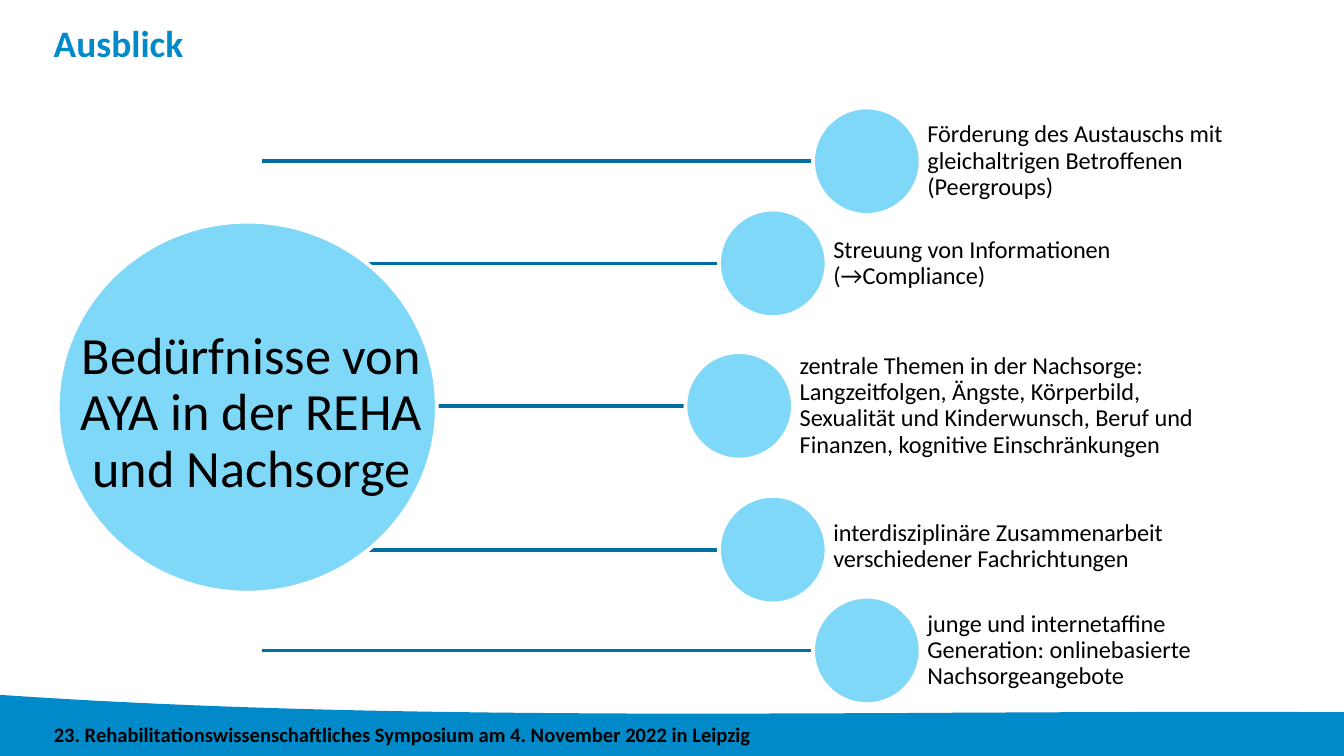
from lxml import etree
from pptx import Presentation
from pptx.dml.color import RGBColor
from pptx.enum.shapes import MSO_CONNECTOR, MSO_SHAPE
from pptx.enum.text import MSO_ANCHOR, PP_ALIGN
from pptx.oxml.ns import qn
from pptx.util import Inches, Pt

STRAIGHT = MSO_CONNECTOR.STRAIGHT
OVAL = MSO_SHAPE.OVAL
TOP, MIDDLE, BOTTOM = MSO_ANCHOR.TOP, MSO_ANCHOR.MIDDLE, MSO_ANCHOR.BOTTOM
LEFT, CENTER = PP_ALIGN.LEFT, PP_ALIGN.CENTER

COLORS = {"brand": "008AC9", "line": "006FA1", "circle": "7FD8F8",
          "text": "000000", "white": "FFFFFF"}
FONT = "Calibri"

HUB_X = 1.95
DOT = 0.8
TEXT_RIGHT = 9.23

# Centre x and y of each small circle, top of its label, label
TOPICS = [
    (6.45, 1.2, 0.8, "Förderung des Austauschs mit gleichaltrigen Betroffenen (Peergroups)"),
    (5.75, 1.96, 1.56, "Streuung von Informationen (→Compliance)"),
    (5.5, 3.02, 2.62,
     "zentrale Themen in der Nachsorge: Langzeitfolgen, Ängste, Körperbild, "
     "Sexualität und Kinderwunsch, Beruf und Finanzen, kognitive Einschränkungen"),
    (5.75, 4.09, 3.67, "interdisziplinäre Zusammenarbeit verschiedener Fachrichtungen"),
    (6.45, 4.84, 4.44, "junge und internetaffine Generation: onlinebasierte Nachsorgeangebote"),
]


def rgb(name):
    return RGBColor.from_string(COLORS[name])


def curve(p0, p1, p2, p3, steps=40):
    """Return points along a cubic Bézier curve."""
    points = []
    for i in range(steps + 1):
        t = i / steps
        u = 1 - t
        points.append(tuple(u**3 * a + 3 * u*u*t * b + 3 * u*t*t * c + t**3 * d
                            for a, b, c, d in zip(p0, p1, p2, p3)))
    return points


class SlideBuilder:
    def __init__(self, prs):
        self.shapes = prs.slides.add_slide(prs.slide_layouts[6]).shapes

    def area(self, points, color):
        first, *rest = [(Inches(x), Inches(y)) for x, y in points]
        builder = self.shapes.build_freeform(*first)
        builder.add_line_segments(rest, close=True)
        s = builder.convert_to_shape()
        s.shadow.inherit = False
        s.fill.solid()
        s.fill.fore_color.rgb = rgb(color)
        s.line.fill.background()

    def line(self, x1, y1, x2, y2):
        s = self.shapes.add_connector(STRAIGHT, Inches(x1), Inches(y1), Inches(x2), Inches(y2))
        s.line.color.rgb = rgb("line")
        s.line.width = Pt(2)
        etree.SubElement(s._element.spPr, qn("a:effectLst"))

    def circle(self, cx, cy, w, h):
        s = self.shapes.add_shape(OVAL, Inches(cx - w / 2), Inches(cy - h / 2),
                                  Inches(w), Inches(h))
        s.shadow.inherit = False
        s.fill.solid()
        s.fill.fore_color.rgb = rgb("circle")
        s.line.color.rgb = rgb("white")
        s.line.width = Pt(2)

    def text(self, x, y, w, h, text, size, color="text", bold=False, anchor=TOP,
             align=LEFT, spacing=None, inset=0):
        tf = self.shapes.add_textbox(Inches(x), Inches(y), Inches(w), Inches(h)).text_frame
        tf.word_wrap = True
        tf.vertical_anchor = anchor
        tf.margin_left = tf.margin_right = Inches(inset)
        tf.margin_top = tf.margin_bottom = 0
        tf.text = text
        p = tf.paragraphs[0]
        p.alignment = align
        p.line_spacing = spacing
        font = p.runs[0].font
        font.name, font.size, font.bold = FONT, Pt(size), bold
        font.color.rgb = rgb(color)


def main():
    prs = Presentation()
    prs.slide_width = Inches(10)
    prs.slide_height = prs.slide_width * 9 // 16
    slide = SlideBuilder(prs)

    wave = curve((-0.01, 5.17), (3.17, 5.39), (6.66, 5.28), (10, 5.3))
    slide.area(wave + [(10, 5.63), (-0.01, 5.63)], "brand")
    slide.text(0.4, 5.37, 7.28, 0.25,
               "23. Rehabilitationswissenschaftliches Symposium am 4. November 2022 in Leipzig",
               11, bold=True)
    slide.text(0.4, 0.15, 4.97, 0.66, "Ausblick", 20, "brand", bold=True, spacing=Pt(24))

    for cx, cy, _, _ in reversed(TOPICS):
        slide.line(HUB_X, cy, cx, cy)
    slide.circle(1.84, 3.03, 2.82, 2.76)
    slide.text(0.45, 2.24, 2.84, 1.47, "Bedürfnisse von AYA in der REHA und Nachsorge",
               28, anchor=BOTTOM, align=CENTER, spacing=0.9)

    for cx, cy, top, label in TOPICS:
        slide.circle(cx, cy, DOT, DOT)
        x = cx + DOT / 2
        slide.text(x, top, TEXT_RIGHT - x, DOT, label, 13,
                   anchor=MIDDLE, spacing=0.9, inset=0.05)

    prs.save("out.pptx")


if __name__ == "__main__":
    main()
